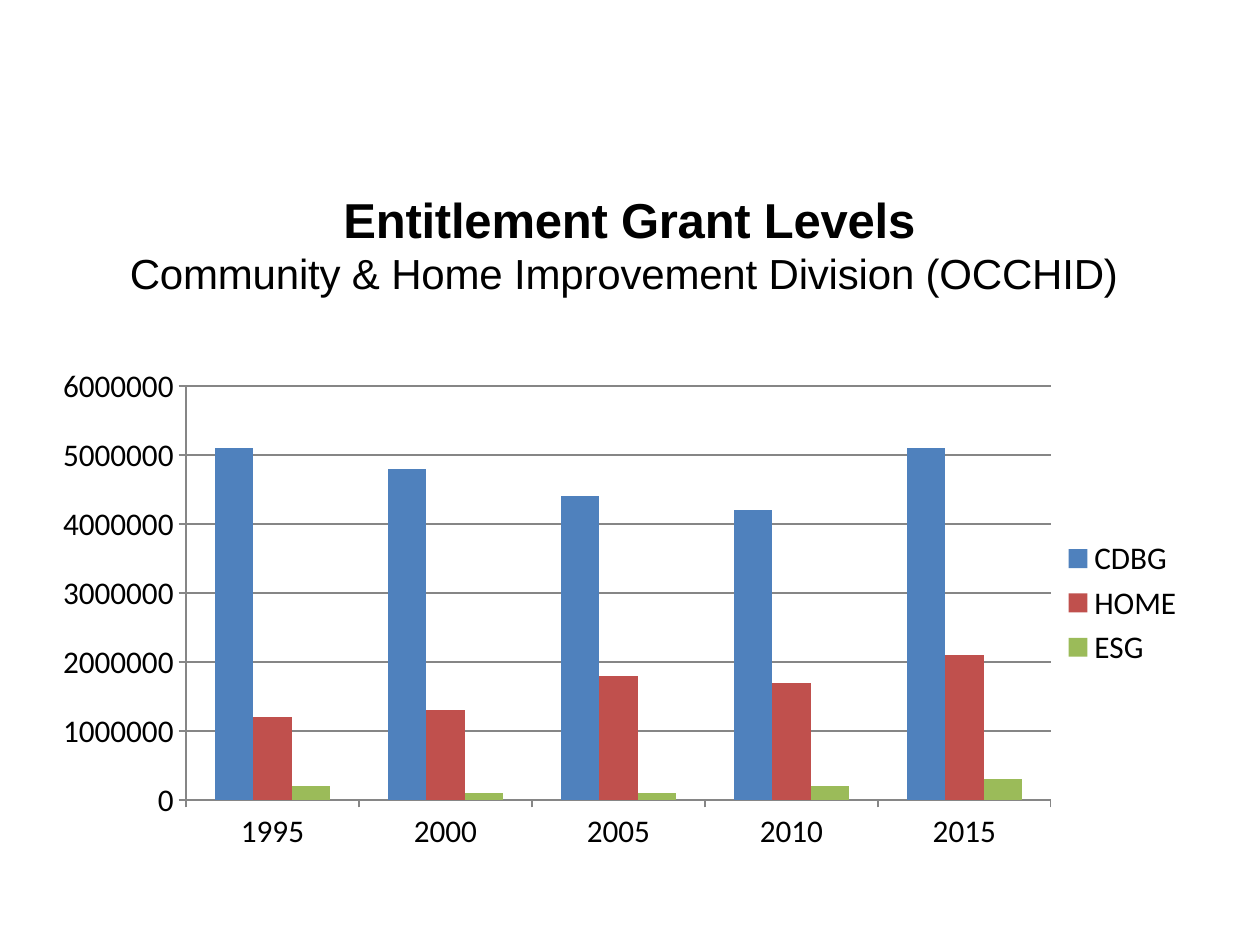
from lxml import etree
from pptx import Presentation
from pptx import util as u
from pptx.chart.data import CategoryChartData
from pptx.dml.color import RGBColor
from pptx.enum import chart as charts, text
from pptx.oxml import parse_xml
from pptx.oxml.ns import nsdecls, qn

COLORS = {
    "ink": "000000",
    "axis": "868686",
    "CDBG": "4F81BD",
    "HOME": "C0504D",
    "ESG": "9BBB59",
}
YEARS = ["1995", "2000", "2005", "2010", "2015"]
GRANTS = {
    "CDBG": [5100000, 4800000, 4400000, 4200000, 5100000],
    "HOME": [1200000, 1300000, 1800000, 1700000, 2100000],
    "ESG": [200000, 100000, 100000, 200000, 300000],
}


class GrantSlide:
    """Holds the slide's style and adds its heading and chart."""

    def __init__(self, slide, colors):
        self.slide = slide
        self.colors = {name: RGBColor.from_string(c) for name, c in colors.items()}

    def style_font(self, font, name, size, bold=False):
        font.name = name
        font.size = u.Pt(size)
        font.bold = bold
        font.color.rgb = self.colors["ink"]

    def heading(self, box, lines):
        frame = self.slide.shapes.add_textbox(*map(u.Inches, box)).text_frame
        frame.word_wrap = True
        frame.margin_left = frame.margin_right = 0
        frame.margin_top = frame.margin_bottom = 0
        frame.text = "\n".join(line for line, _, _ in lines)
        for paragraph, (_, size, bold) in zip(frame.paragraphs, lines):
            paragraph.alignment = text.PP_ALIGN.CENTER
            properties = paragraph._p.get_or_add_pPr()
            properties.set("marL", str(u.Inches(0.01)))
            for run in paragraph.runs:
                self.style_font(run.font, "Arial", size, bold)
                run._r.get_or_add_rPr().set("spc", "-10")

    def column_chart(self, box, categories, series, plot_area):
        data = CategoryChartData(number_format="General")
        data.categories = categories
        for name, values in series.items():
            data.add_series(name, values)
        chart = self.slide.shapes.add_chart(
            charts.XL_CHART_TYPE.COLUMN_CLUSTERED, *map(u.Inches, box), data
        ).chart
        self.style_font(chart.font, "Calibri", 18)
        chart.has_title = False
        chart.has_legend = True
        chart.legend.position = charts.XL_LEGEND_POSITION.RIGHT
        chart.legend.include_in_layout = False

        columns = chart.plots[0]
        columns.gap_width = 150
        columns.overlap = 0
        columns.vary_by_categories = False
        for grant in columns.series:
            grant.format.fill.solid()
            grant.format.fill.fore_color.rgb = self.colors[grant.name]

        amounts = chart.value_axis
        amounts.minimum_scale, amounts.maximum_scale = 0, 6000000
        amounts.major_unit = 1000000
        amounts.has_major_gridlines = True
        for axis in (chart.category_axis, amounts):
            axis.major_tick_mark = charts.XL_TICK_MARK.OUTSIDE
            axis.minor_tick_mark = charts.XL_TICK_MARK.NONE
        for ruled in (chart.category_axis, amounts, amounts.major_gridlines):
            ruled.format.line.color.rgb = self.colors["axis"]
            ruled.format.line.width = u.Pt(0.75)
        self.place_plot(chart, plot_area)

    def place_plot(self, chart, plot_area):
        layout = parse_xml(f"<c:layout {nsdecls('c')}/>")
        manual = etree.SubElement(layout, qn("c:manualLayout"))
        settings = {"layoutTarget": "inner", "xMode": "edge", "yMode": "edge"}
        settings.update(zip("xywh", plot_area))
        for name, value in settings.items():
            etree.SubElement(manual, qn(f"c:{name}")).set("val", str(value))
        area = chart._chartSpace.chart.plotArea
        for previous in area.findall(qn("c:layout")):
            area.remove(previous)
        area.insert(0, layout)


def main():
    deck = Presentation()
    deck.slide_width, deck.slide_height = u.Inches(10), u.Inches(7.5)
    grants = GrantSlide(deck.slides.add_slide(deck.slide_layouts[6]), COLORS)
    grants.heading(
        (-0.01, 1.5, 10, 0.88),
        [
            ("Entitlement Grant Levels", 28, True),
            ("Community & Home Improvement Division (OCCHID) ", 24, False),
        ],
    )
    grants.column_chart((0.5, 2.83, 9, 3.92), YEARS, GRANTS, (0.1, 0.06, 0.77, 0.84))
    deck.save("out.pptx")


if __name__ == "__main__":
    main()
